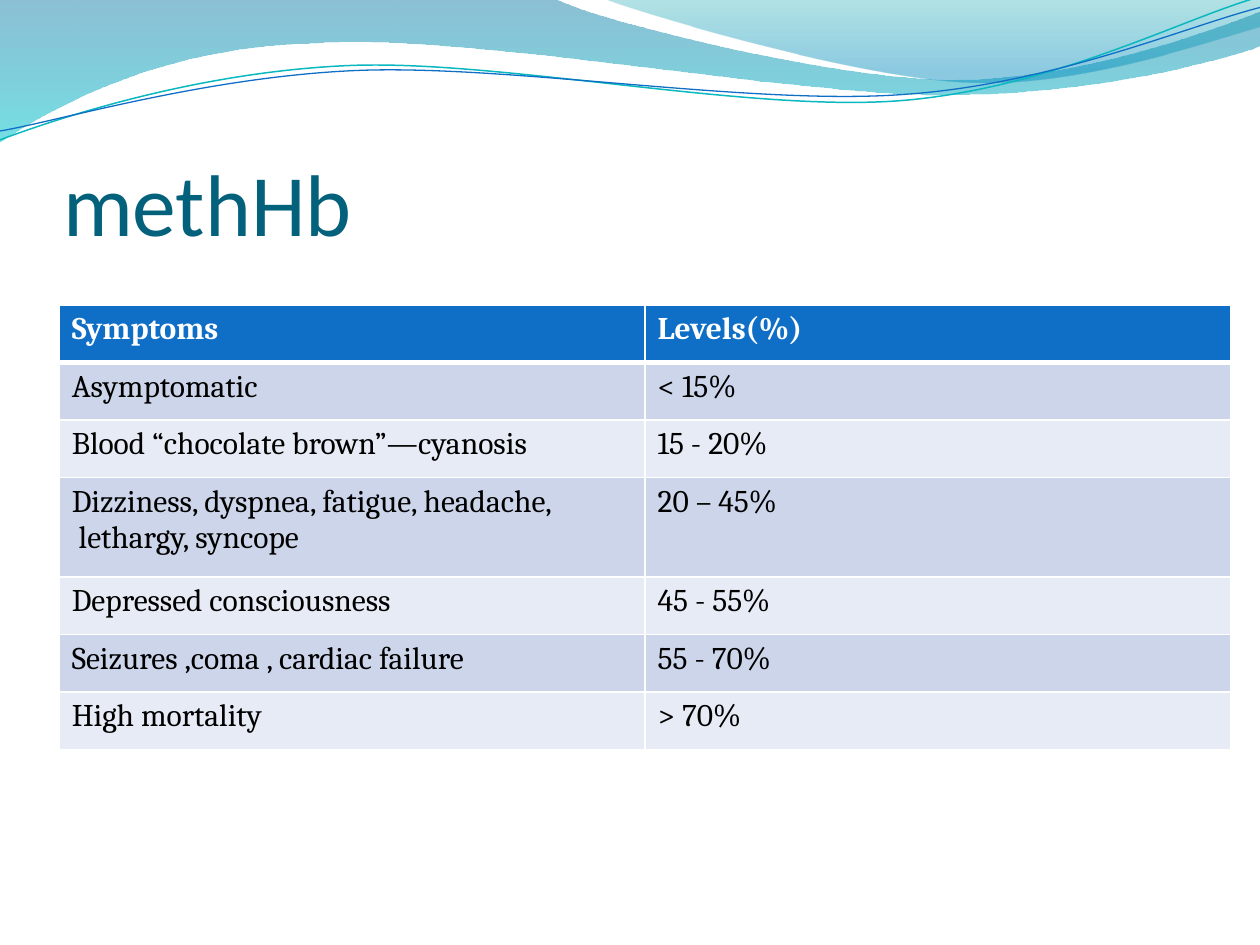
from dataclasses import dataclass
from math import cos, radians, sin

from lxml.etree import SubElement
from pptx import Presentation
from pptx.dml.color import RGBColor
from pptx.enum.text import MSO_ANCHOR as Anchor, PP_ALIGN as Align
from pptx.oxml import parse_xml
from pptx.oxml.ns import nsdecls, qn
from pptx.util import Inches, Pt

WHITE = RGBColor(0xFF, 0xFF, 0xFF)
BLACK = RGBColor(0, 0, 0)
TITLE_TEAL = RGBColor(0x04, 0x61, 0x7B)
BLUE = RGBColor(0x0F, 0x6F, 0xC6)
CYAN = RGBColor(0x0A, 0xB8, 0xBF)
BAND_DARK = RGBColor(0xCC, 0xD5, 0xEA)
BAND_LIGHT = RGBColor(0xE7, 0xEB, 0xF5)

TABLE_HEIGHT = 3.53
TALL_ROW = 0.79

Point = tuple[float, float]


@dataclass
class Stop:
    position: float
    color: RGBColor
    opacity: int


@dataclass
class Wave:
    """Outline in inches: a 2-number step is a line, a 6-number step a Bezier curve."""
    start: Point
    steps: list[tuple[float, ...]]
    stops: tuple[Stop, ...] = ()
    line: RGBColor | None = None
    width: float = 0
    tilt: float = 0
    pivot: Point = (0, 0)


WAVES = [
    Wave((0, 0), [
        (4.4, -0.01),
        (4.76, 0.17, 6.64, 0.63, 7.58, 0.63),
        (8.53, 0.63, 9.58, 0.26, 10, 0.09),
        (10.01, 0.36),
        (9.83, 0.44, 8.7, 0.76, 7.46, 0.75),
        (6.22, 0.75, 3.82, 0.28, 2.57, 0.34),
        (1.29, 0.36, 0.46, 0.83, -0.01, 1.13),
        (0, 0),
    ], stops=(Stop(0, RGBColor(0x00, 0x74, 0xA1), 45),
              Stop(1, RGBColor(0x00, 0xC6, 0xCF), 55))),
    Wave((4.79, -0.01), [
        (5.09, 0.11, 6.82, 0.62, 7.69, 0.65),
        (8.56, 0.69, 9.61, 0.32, 10, 0.21),
        (10, 0),
        (4.79, -0.01),
    ], stops=(Stop(0, RGBColor(0x00, 0xA1, 0xA9), 30),
              Stop(0.8, RGBColor(0x00, 0x8B, 0xBF), 45))),
    Wave((0, 1.11), [
        (0.48, 0.93, 1.58, 0.57, 2.77, 0.52),
        (3.95, 0.47, 5.93, 0.89, 7.13, 0.8),
        (8.33, 0.71, 9.38, 0.15, 9.98, -0.02),
    ], line=CYAN, width=0.85, tilt=357.3, pivot=(4.99, 0.58)),
    Wave((0, 1.04), [
        (0.47, 0.96, 1.64, 0.61, 2.83, 0.56),
        (4.03, 0.51, 5.97, 0.84, 7.17, 0.75),
        (8.36, 0.67, 9.41, 0.21, 10, 0.06),
    ], line=BLUE, width=0.75, tilt=357.3, pivot=(5, 0.59)),
]

ROWS = [
    ("Symptoms", "Levels(%)"),
    ("Asymptomatic", "< 15%"),
    ("Blood “chocolate brown”—cyanosis", "15 - 20%"),
    ("Dizziness, dyspnea, fatigue, headache,\n lethargy, syncope", "20 – 45%"),
    ("Depressed consciousness", "45 - 55%"),
    ("Seizures ,coma , cardiac failure", "55 - 70%"),
    ("High mortality", "> 70%"),
]
SHORT_ROW = (TABLE_HEIGHT - TALL_ROW) / (len(ROWS) - 1)


def write_text(frame, text: str, *, font: str, size: float, color: RGBColor,
               bold: bool = False) -> None:
    frame.text = text
    for para in frame.paragraphs:
        para.alignment = Align.LEFT
        for span in para.runs:
            span.font.name = font
            span.font.size = Pt(size)
            span.font.bold = bold
            span.font.color.rgb = color


def untilted_points(wave: Wave) -> list[Point]:
    """All points of the wave in EMU, before the shape's own rotation is applied."""
    numbers = [*wave.start, *(number for step in wave.steps for number in step)]
    angle = radians(-wave.tilt)
    center_x, center_y = wave.pivot
    points = []
    for x, y in zip(numbers[::2], numbers[1::2]):
        dx, dy = x - center_x, y - center_y
        points.append((Inches(center_x + dx * cos(angle) - dy * sin(angle)),
                       Inches(center_y + dx * sin(angle) + dy * cos(angle))))
    return points


def bend_curves(shape, wave: Wave) -> None:
    """Turn the three segments of each 6-number step into one Bezier curve."""
    segments = iter(list(shape.element.iter(qn("a:lnTo"))))
    for step in wave.steps:
        parts = [next(segments) for _ in range(len(step) // 2)]
        if len(parts) == 1:
            continue
        outline = parts[0].getparent()
        curve = SubElement(outline, qn("a:cubicBezTo"))
        outline.insert(outline.index(parts[0]), curve)
        for part in parts:
            curve.append(part[0])
            outline.remove(part)


def draw_wave(page, wave: Wave) -> None:
    first, *others = untilted_points(wave)
    builder = page.shapes.build_freeform(*first)
    builder.add_line_segments(others, close=bool(wave.stops))
    shape = builder.convert_to_shape()
    bend_curves(shape, wave)
    shape.rotation = wave.tilt
    shape.shadow.inherit = False
    if wave.line is not None:
        shape.fill.background()
        shape.line.color.rgb = wave.line
        shape.line.width = Pt(wave.width)
        return
    shape.line.fill.background()
    shape.fill.gradient()
    shape.fill.gradient_angle = 270
    for target, stop in zip(shape.fill.gradient_stops, wave.stops):
        target.position = stop.position
        target.color.rgb = stop.color
    for color, stop in zip(shape.element.iter(qn("a:srgbClr")), wave.stops):
        color.append(parse_xml(f'<a:alpha {nsdecls("a")} val="{stop.opacity * 1000}"/>'))


def set_borders(cell, **widths: float) -> None:
    """Draw white borders; widths in points are keyed by side: L, R, T, B."""
    properties = cell._tc.get_or_add_tcPr()
    for side, width in widths.items():
        properties.append(parse_xml(
            f'<a:ln{side} {nsdecls("a")} w="{Pt(width)}"><a:solidFill>'
            f'<a:srgbClr val="{WHITE}"/></a:solidFill></a:ln{side}>'))


def add_symptom_table(page) -> None:
    table = page.shapes.add_table(len(ROWS), 2, Inches(0.47), Inches(2.42),
                                  Inches(9.3), Inches(TABLE_HEIGHT)).table
    for row_index, texts in enumerate(ROWS):
        header = row_index == 0
        band = BAND_DARK if row_index % 2 else BAND_LIGHT
        table.rows[row_index].height = Inches(TALL_ROW if "\n" in texts[0] else SHORT_ROW)
        for column, text in enumerate(texts):
            cell = table.cell(row_index, column)
            set_borders(cell, L=1, R=1, T=3 if row_index == 1 else 1, B=3 if header else 1)
            cell.fill.solid()
            cell.fill.fore_color.rgb = BLUE if header else band
            write_text(cell.text_frame, text, font="Cambria", size=18,
                       color=WHITE if header else BLACK, bold=header)


def add_title(page, text: str) -> None:
    """Fill the title placeholder and bring it in front of the waves."""
    title = page.shapes.title
    title.element.getparent().append(title.element)
    title.left, title.top = Inches(0.5), Inches(0.77)
    title.width, title.height = Inches(9), Inches(1.25)
    frame = title.text_frame
    frame.vertical_anchor = Anchor.BOTTOM
    frame.margin_left = frame.margin_right = frame.margin_bottom = 0
    frame.margin_top = Inches(0.05)
    write_text(frame, text, font="Calibri", size=50, color=TITLE_TEAL)


def main() -> None:
    deck = Presentation()
    deck.slide_width, deck.slide_height = Inches(10), Inches(7.5)
    page = deck.slides.add_slide(deck.slide_layouts[5])
    for wave in WAVES:
        draw_wave(page, wave)
    add_title(page, "methHb")
    add_symptom_table(page)
    deck.save("out.pptx")


if __name__ == "__main__":
    main()
